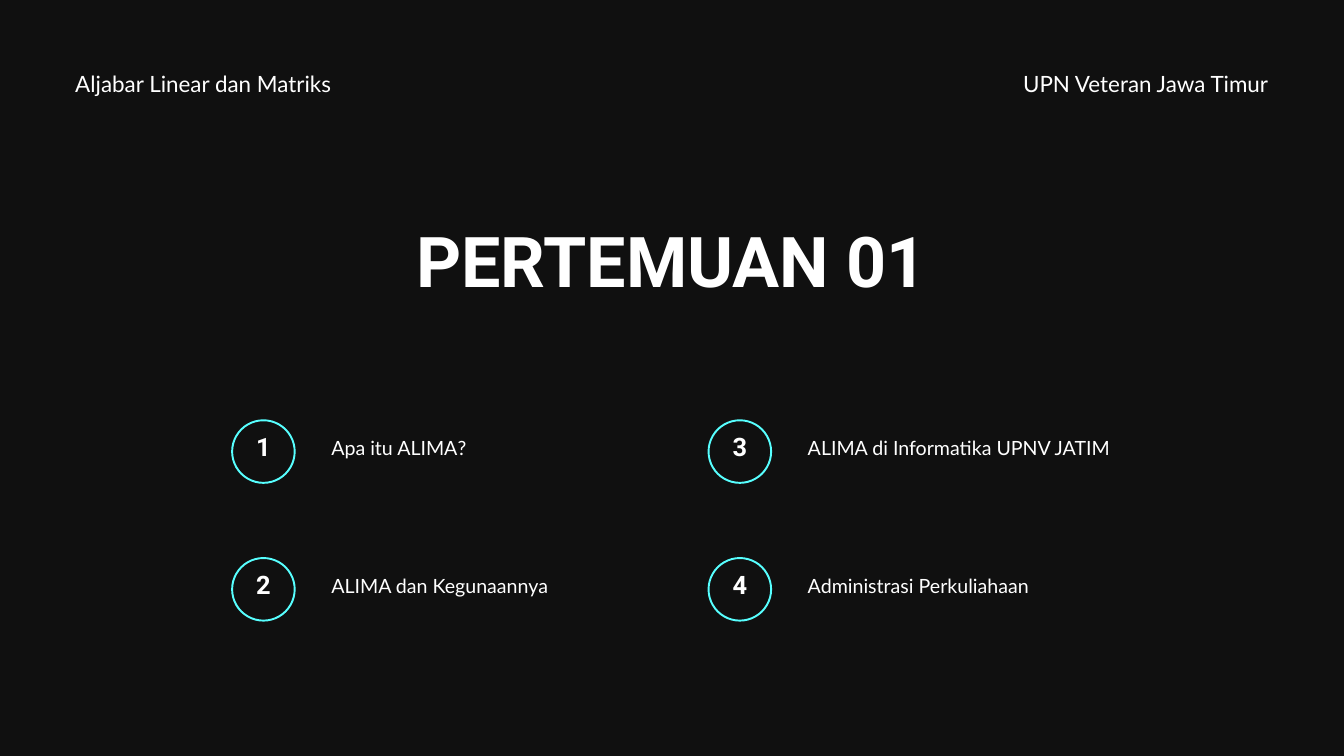
import pptx
import pptx.dml.color
import pptx.enum.shapes
import pptx.enum.text
import pptx.util
from pptx.util import Inches

COLORS = {"background": "101010", "text": "FFFFFF", "ring": "57FFFF"}
ALIGN = pptx.enum.text.PP_ALIGN
TOPICS = [
    "Apa itu ALIMA?",
    "ALIMA dan Kegunaannya",
    "ALIMA di Informatika UPNV JATIM",
    "Administrasi Perkuliahaan",
]


def rgb(name):
    return pptx.dml.color.RGBColor.from_string(COLORS[name])


def add_text(shapes, box, text, font, size, spacing, align=ALIGN.LEFT, bold=False):
    frame = shapes.add_textbox(*map(Inches, box)).text_frame
    frame.margin_left = frame.margin_right = 0
    frame.margin_top = frame.margin_bottom = 0
    frame.word_wrap = True
    frame.auto_size = pptx.enum.text.MSO_AUTO_SIZE.SHAPE_TO_FIT_TEXT
    paragraph = frame.paragraphs[0]
    paragraph.alignment = align
    paragraph.line_spacing = pptx.util.Pt(spacing)
    run = paragraph.add_run()
    run.text = text
    run.font.name = font
    run.font.size = pptx.util.Pt(size)
    run.font.bold = bold
    run.font.color.rgb = rgb("text")


def add_header(slide, left, top, width, height):
    label_width = 4.3
    right_label = left + width - label_width
    add_text(slide.shapes, (right_label, top, label_width, height),
             "UPN Veteran Jawa Timur", "Lato", 24, 28.8, ALIGN.RIGHT)
    add_text(slide.shapes, (left, top, label_width, height),
             "Aljabar Linear dan Matriks", "Lato", 24, 28.8)


def add_title(slide, left, top, width, height):
    add_text(slide.shapes, (left, top, width, height),
             "PERTEMUAN 01", "Roboto", 75, 82.5, ALIGN.CENTER, True)


def add_topic(slide, left, top, width, number, topic):
    diameter = 0.96
    badge = slide.shapes.add_group_shape()
    ring = badge.shapes.add_shape(
        pptx.enum.shapes.MSO_SHAPE.DONUT,
        Inches(left), Inches(top), Inches(diameter), Inches(diameter))
    ring.adjustments[0] = 0.03
    ring.shadow.inherit = False
    ring.fill.solid()
    ring.fill.fore_color.rgb = rgb("ring")
    ring.line.fill.background()
    add_text(badge.shapes, (left + 0.3, top + 0.27, 0.36, 0.44),
             str(number), "Roboto", 27.2, 26.1, ALIGN.CENTER, True)
    label_offset = 1.49
    add_text(slide.shapes,
             (left + label_offset, top + 0.19, width - label_offset, 0.46),
             topic, "Lato", 21, 29.4)


def add_agenda(slide, left, top, width, height):
    column_width, row_height, rows = 6.07, 0.96, 2
    column_pitch = width - column_width
    row_pitch = height - row_height
    for index, topic in enumerate(TOPICS):
        column, row = divmod(index, rows)
        add_topic(slide, left + column * column_pitch, top + row * row_pitch,
                  column_width, index + 1, topic)


def main():
    deck = pptx.Presentation()
    deck.slide_width = Inches(20)
    deck.slide_height = Inches(11.25)
    slide = deck.slides.add_slide(deck.slide_layouts[6])
    slide.background.fill.solid()
    slide.background.fill.fore_color.rgb = rgb("background")
    add_header(slide, 1.12, 1.04, 17.75, 0.48)
    add_title(slide, 2.4, 3.34, 15.19, 1.27)
    add_agenda(slide, 3.44, 6.24, 13.16, 3.01)
    deck.save("out.pptx")


if __name__ == "__main__":
    main()
